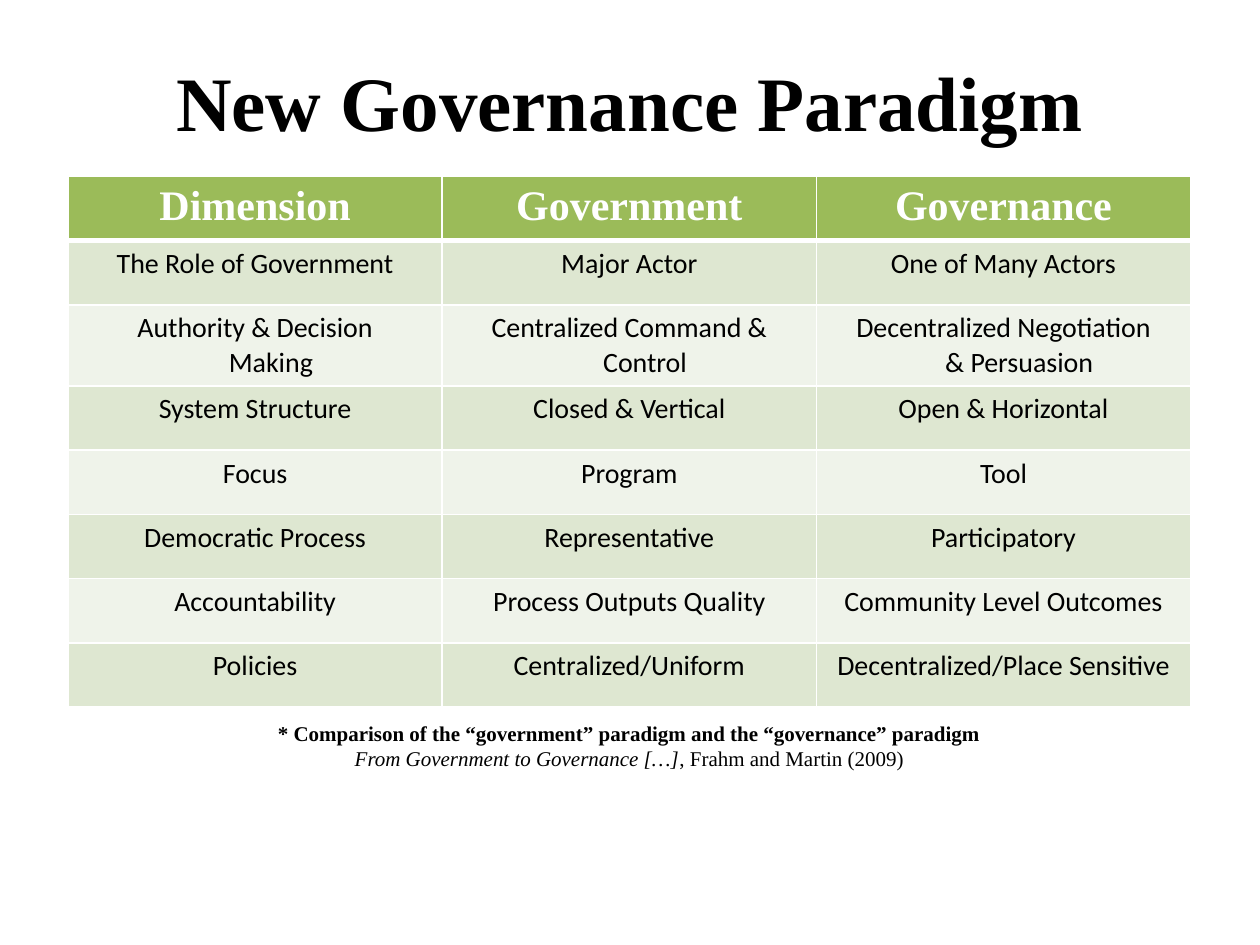
from lxml import etree
from pptx import Presentation
from pptx.dml.color import RGBColor
from pptx.enum.text import MSO_ANCHOR, PP_ALIGN
from pptx.oxml.ns import qn
from pptx.util import Inches, Pt

CENTER = PP_ALIGN.CENTER
MIDDLE = MSO_ANCHOR.MIDDLE
COLORS = {"header": "9BBB59", "odd": "DEE7D1", "even": "EFF3EA",
          "white": "FFFFFF", "black": "000000"}
SERIF, SANS = "Times New Roman", "Calibri"


def add_run(paragraph, text, color="black", **formats):
    paragraph.alignment = CENTER
    run = paragraph.add_run()
    run.text = text
    run.font.color.rgb = RGBColor.from_string(COLORS[color])
    for attribute, value in formats.items():
        setattr(run.font, attribute, value)


def add_borders(cell, bottom_width):
    widths = {"a:lnL": 1, "a:lnR": 1, "a:lnT": 1, "a:lnB": bottom_width}
    properties = cell._tc.get_or_add_tcPr()
    for position, (tag, width) in enumerate(widths.items()):
        line = etree.Element(qn(tag), w=str(Pt(width)))
        fill = etree.SubElement(line, qn("a:solidFill"))
        etree.SubElement(fill, qn("a:srgbClr"), val=COLORS["white"])
        properties.insert(position, line)


prs = Presentation()
prs.slide_width, prs.slide_height = Inches(10), Inches(7.5)
slide = prs.slides.add_slide(prs.slide_layouts[6])

rows = [
    ("Dimension", "Government", "Governance"),
    ("The Role of Government", "Major Actor", "One of Many Actors"),
    ("Authority & Decision\nMaking", "Centralized Command &\nControl",
     "Decentralized Negotiation\n& Persuasion"),
    ("System Structure", "Closed & Vertical", "Open & Horizontal"),
    ("Focus", "Program", "Tool"),
    ("Democratic Process", "Representative", "Participatory"),
    ("Accountability", "Process Outputs Quality", "Community Level Outcomes"),
    ("Policies", "Centralized/Uniform", "Decentralized/Place Sensitive"),
]
comparison = slide.shapes.add_table(
    len(rows), 3, Inches(0.54), Inches(1.4), Inches(8.92), Inches(4.18)).table
for column in comparison.columns:
    column.width = Inches(2.97)

for row_index, texts in enumerate(rows):
    is_header = row_index == 0
    has_two_lines = "\n" in texts[0]
    comparison.rows[row_index].height = Inches(0.63 if has_two_lines else 0.51)
    band = "header" if is_header else "odd" if row_index % 2 else "even"
    for column_index, text in enumerate(texts):
        cell = comparison.cell(row_index, column_index)
        cell.fill.solid()
        cell.fill.fore_color.rgb = RGBColor.from_string(COLORS[band])
        add_borders(cell, 3 if is_header else 1)
        for line_index, words in enumerate(text.split("\n")):
            frame = cell.text_frame
            paragraph = frame.add_paragraph() if line_index else frame.paragraphs[0]
            add_run(paragraph, words, "white" if is_header else "black",
                    name=SERIF if is_header else SANS,
                    size=Pt(24 if is_header else 16), bold=is_header)
            if line_index:
                indent = paragraph._p.get_or_add_pPr()
                indent.set("marL", str(Inches(0.25)))
                indent.set("indent", "0")

citation = slide.shapes.add_textbox(
    Inches(2.08), Inches(5.67), Inches(5.83), Inches(0.51)).text_frame
citation.word_wrap = True
add_run(citation.paragraphs[0],
        "* Comparison of the “government” paradigm and the “governance” paradigm",
        name=SERIF, size=Pt(12), bold=True)
reference = citation.add_paragraph()
add_run(reference, "From Government to Governance […]",
        name=SERIF, size=Pt(12), italic=True)
add_run(reference, ", Frahm and Martin (2009)", name=SERIF, size=Pt(12))

title = slide.shapes.add_textbox(
    Inches(0.75), Inches(0), Inches(8.5), Inches(1.6)).text_frame
title.word_wrap = True
title.vertical_anchor = MIDDLE
add_run(title.paragraphs[0], "New Governance Paradigm",
        name=SERIF, size=Pt(44), bold=True)

prs.save("out.pptx")
